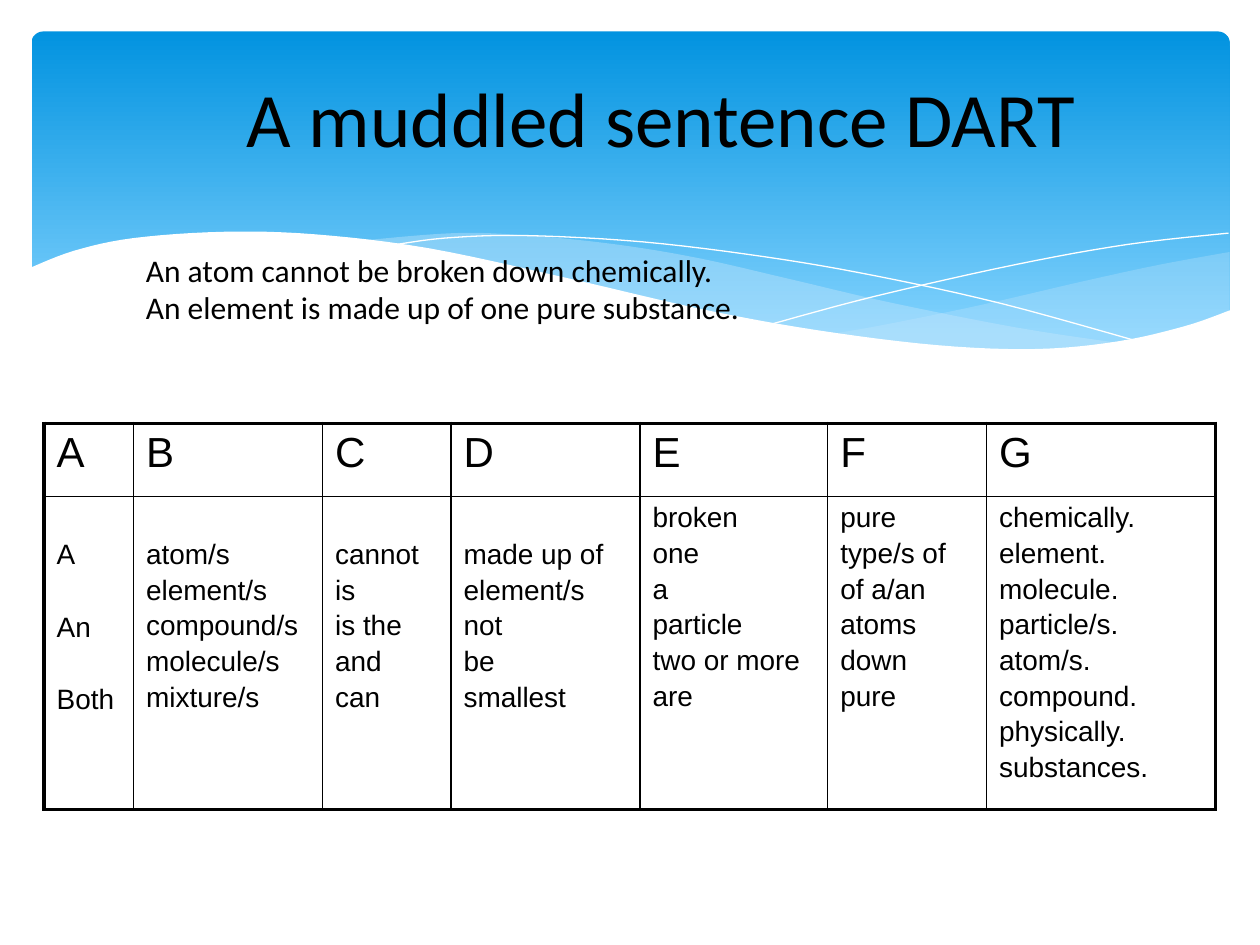
from lxml.etree import SubElement
from pptx import Presentation
from pptx.dml.color import RGBColor
from pptx.enum.shapes import MSO_SHAPE as SHAPE
from pptx.enum.text import MSO_ANCHOR as ANCHOR, PP_ALIGN as ALIGN
from pptx.oxml.ns import qn
from pptx.util import Inches, Pt

prs = Presentation()
prs.slide_width, prs.slide_height = Inches(10), Inches(7.5)
COL, ROW = prs.slide_width / 10, prs.slide_height / 7.5
LINE_STEP = 21
LINE_GAP = 2.6

TITLE = "A muddled sentence DART"
EXAMPLES = [
    "An atom cannot be broken down chemically.",
    "An element is made up of one pure substance.",
]
COLUMNS = [
    ("A", 0.71, 1, 2, ["A", "An", "Both"]),
    ("B", 1.5, 1, 1, ["atom/s", "element/s", "compound/s", "molecule/s", "mixture/s"]),
    ("C", 1.02, 1, 1, ["cannot", "is", "is the", "and", "can"]),
    ("D", 1.5, 1, 1, ["made up of", "element/s", "not", "be", "smallest"]),
    ("E", 1.49, 0, 1, ["broken", "one", "a", "particle", "two or more", "are"]),
    ("F", 1.26, 0, 1, ["pure", "type/s of", "of a/an", "atoms", "down", "pure"]),
    ("G", 1.82, 0, 1, ["chemically.", "element.", "molecule.", "particle/s.",
                       "atom/s.", "compound.", "physically.", "substances."]),
]

RIGHT_WAVE = [
    [(9.53, .16), (8.98, .26), (8.38, .39), (7.56, .58), (6.83, .73), (6.38, .81)],
    [(6.38, .81), (6.96, .88), (7.46, .93), (7.91, .94), (8.4, .91), (8.9, .83),
     (9.26, .73), (9.53, .63)],
]
LEFT_WAVE = [
    [(8.7, .89), (7.84, .76), (6.83, .56), (6.06, .38), (5.32, .21), (4.66, .1),
     (3.97, .03), (3.38, .01), (2.63, .07)],
    [(2.63, .07), (3.39, .19), (4.26, .38), (5.43, .64), (6.42, .82), (7.25, .92),
     (7.95, .94), (8.7, .89)],
]
FALLING_LINE = [(2.86, .11), (3.3, .05), (3.93, .03), (4.87, .08), (5.85, .2),
                (6.72, .35), (7.72, .57), (8.84, .88)]
RISING_LINE = [(5.9, .73), (6.72, .51), (7.83, .26), (8.72, .1), (9.52, .01)]
WHITE_EDGE = [(0, .29), (.36, .15), (.83, .05), (1.54, 0), (2.27, .02), (3.17, .13),
              (4.24, .36), (5.32, .61), (6.25, .78), (7.21, .9), (8, .93),
              (8.64, .87), (9.17, .75), (9.54, .62)]


def color(value):
    return RGBColor.from_string(value)


def place(box):
    x, y, w, h = box
    return round(x * COL), round(y * ROW), round(w * COL), round(h * ROW)


def add_run(p, text, size, font):
    r = p.add_run()
    r.text = text
    r.font.size, r.font.name = Pt(size), font
    r.font.color.rgb = color("000000")


def smooth_curve(knots, steps=6):
    ends = [knots[0]] + knots + [knots[-1]]
    points = [knots[0]]
    for a, b, c, d in zip(ends, ends[1:], ends[2:], ends[3:]):
        for i in range(1, steps + 1):
            t = i / steps
            points.append(tuple(
                (2 * q + (r - o) * t + (2 * o - 5 * q + 4 * r - u) * t ** 2
                 + (3 * q - o - 3 * r + u) * t ** 3) / 2
                for o, q, r, u in zip(a, b, c, d)))
    return points


def add_outline(s, box, points, fill=None, opacity=100, closed=True):
    spots = [(round((box[0] + x) * COL), round((box[1] + y) * ROW)) for x, y in points]
    builder = s.shapes.build_freeform(*spots[0])
    builder.add_line_segments(spots[1:], close=closed)
    sp = builder.convert_to_shape()
    sp.shadow.inherit = False
    if fill:
        sp.fill.solid()
        sp.fill.fore_color.rgb = color(fill)
        sp.line.fill.background()
        tone = sp.fill._xPr.find(qn("a:solidFill"))[0]
        if opacity < 100:
            SubElement(tone, qn("a:alpha"), val=str(opacity * 1000))
    else:
        sp.fill.background()
        sp.line.color.rgb = color("FFFFFF")
        sp.line.width = Pt(0)


def add_banner(s, box):
    sp = s.shapes.add_shape(SHAPE.ROUNDED_RECTANGLE, *place(box))
    sp.adjustments[0] = 0.034
    sp.shadow.inherit = False
    sp.line.fill.background()
    sp.fill.gradient()
    sp.fill.gradient_angle = 270
    for stop, position, tone in zip(sp.fill.gradient_stops, (0, 0.9), ("0293E0", "83D3FE")):
        stop.position = position
        stop.color.rgb = color(tone)


def add_waves(s, box):
    w, h = box[2:]
    for wave, opacity in ((RIGHT_WAVE, 29), (LEFT_WAVE, 40)):
        points = [pt for edge in wave for pt in smooth_curve(edge)]
        add_outline(s, box, points, "C6E7FC", opacity)
    for line in (FALLING_LINE, RISING_LINE):
        add_outline(s, box, smooth_curve(line), closed=False)
    add_outline(s, box, smooth_curve(WHITE_EDGE) + [(w, h), (0, h)], "FFFFFF")


def add_text(s, box, lines, size, align=ALIGN.LEFT, anchor=ANCHOR.TOP):
    tf = s.shapes.add_textbox(*place(box)).text_frame
    tf.word_wrap, tf.vertical_anchor = True, anchor
    for i, line in enumerate(lines):
        p = tf.add_paragraph() if i else tf.paragraphs[0]
        p.alignment = align
        add_run(p, line, size, "Calibri")


def set_borders(cell, widths):
    tcPr = cell._tc.get_or_add_tcPr()
    for side, width in zip("LRTB", widths):
        ln = SubElement(tcPr, qn(f"a:ln{side}"), w=str(Pt(width)))
        SubElement(SubElement(ln, qn("a:solidFill")), qn("a:srgbClr"), val="000000")


def add_word_table(s, box):
    heights = (0.58, box[3] - 0.58)
    last = len(COLUMNS) - 1
    table = s.shapes.add_table(2, len(COLUMNS), *place(box)).table
    table.first_row = table.horz_banding = False
    for row, height in zip(table.rows, heights):
        row.height = round(height * ROW)
    for c, (letter, width, skipped, step, words) in enumerate(COLUMNS):
        table.columns[c].width = round(width * COL)
        for r, (lines, size) in enumerate((([letter], 24), (words, 16))):
            cell = table.cell(r, c)
            edges = (c == 0, c == last, r == 0, r == 1)
            set_borders(cell, [2.25 if outer else 1 for outer in edges])
            cell.fill.background()
            cell.margin_top = Inches(0.05) + Pt(LINE_STEP * skipped * r)
            for i, line in enumerate(lines):
                p = cell.text_frame.add_paragraph() if i else cell.text_frame.paragraphs[0]
                if i:
                    p.space_before = Pt(LINE_GAP + LINE_STEP * (step - 1))
                add_run(p, line, size, "Arial")


def main():
    s = prs.slides.add_slide(prs.slide_layouts[6])
    add_banner(s, (0.25, 0.25, 9.51, 2.7))
    add_waves(s, (0.23, 1.84, 9.54, 1.45))
    add_text(s, (1, 0.3, 8.5, 1.25), [TITLE], 44, ALIGN.CENTER, ANCHOR.MIDDLE)
    add_word_table(s, (0.35, 3.36, 9.3, 2.97))
    add_text(s, (1.06, 1.94, 7.17, 0.85), EXAMPLES, 18)
    prs.save("out.pptx")


if __name__ == "__main__":
    main()
